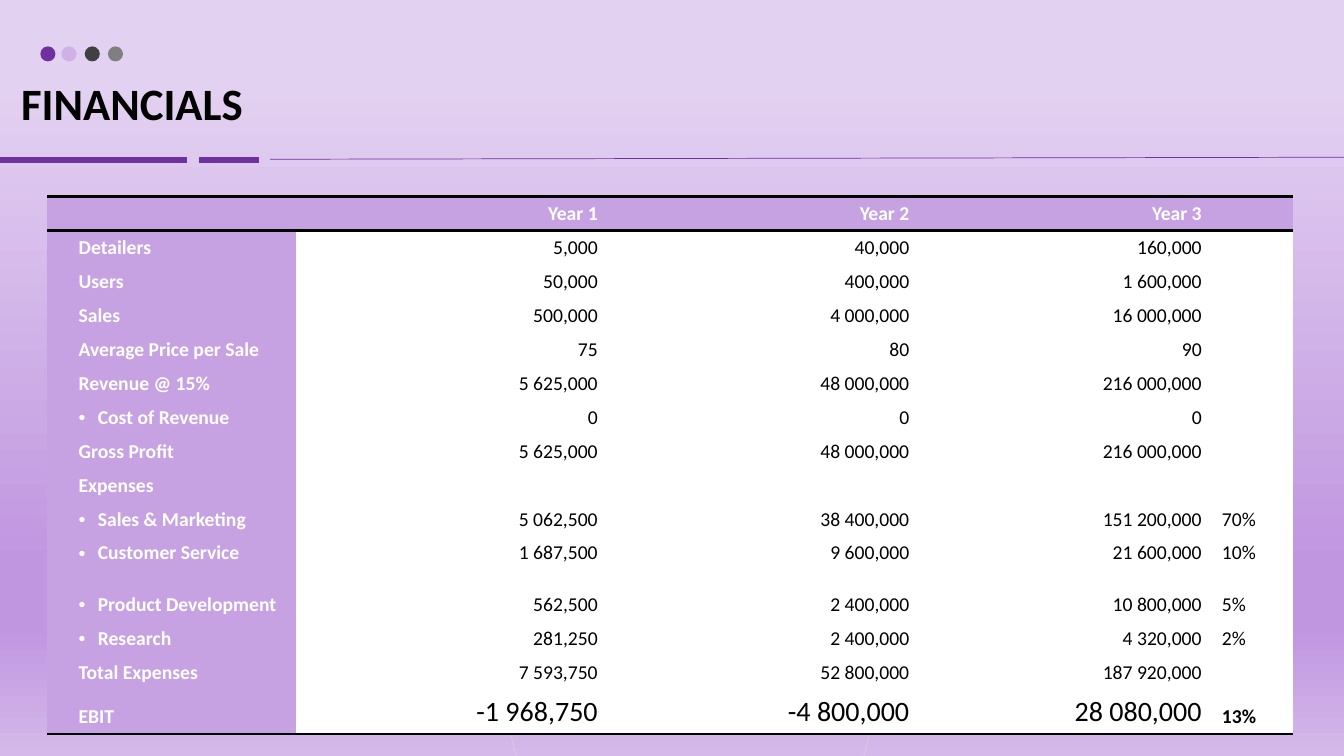
from copy import deepcopy
from lxml.etree import SubElement
from pptx import Presentation
from pptx.dml.color import RGBColor
from pptx.enum.shapes import MSO_CONNECTOR as CONN, MSO_SHAPE as SHAPE
from pptx.enum.text import MSO_ANCHOR as ANCHOR, MSO_AUTO_SIZE as AUTO, PP_ALIGN as ALIGN
from pptx.oxml.ns import qn
from pptx.util import Inches, Pt


def rgb(color):
    return RGBColor.from_string(color)


def border(cell, side):
    ln = SubElement(cell._tc.get_or_add_tcPr(), qn("a:" + side), w=str(Pt(2)))
    fill = SubElement(ln, qn("a:solidFill"))
    SubElement(fill, qn("a:srgbClr"), val="000000")


PURPLE, LILAC, WHITE, BLACK = "7030A0", "C7A2E3", "FFFFFF", "000000"

prs = Presentation()
prs.slide_width, prs.slide_height = Inches(13.33), Inches(7.5)
s = prs.slides.add_slide(prs.slide_layouts[5])

bg = s.background.fill
bg.gradient()
bg.gradient_angle = 270
gs_list = bg.gradient_stops[0]._gs.getparent()
for _ in range(2):
    gs_list.append(deepcopy(gs_list[0]))
stops = [(0.11, "E3D1F1"), (0.75, "C096E0"), (0.83, "C096E0"), (1, "D5B9EA")]
for stop, (position, color) in zip(bg.gradient_stops, stops):
    stop.position = position
    stop.color.rgb = rgb(color)

rules = [(-0.03, 1.59, 1.85, 1.59, 4.5), (1.97, 1.59, 2.57, 1.59, 4.5),
         (2.68, 1.58, 13.33, 1.56, 0.5)]
for x1, y1, x2, y2, width in rules:
    rule = s.shapes.add_connector(CONN.STRAIGHT, Inches(x1), Inches(y1), Inches(x2), Inches(y2))
    rule.line.color.rgb = rgb(PURPLE)
    rule.line.width = Pt(width)
    SubElement(rule._element.spPr, qn("a:effectLst"))

for x, color in [(0.4, PURPLE), (0.61, LILAC), (0.84, "404040"), (1.07, "7F7F7F")]:
    dot = s.shapes.add_shape(SHAPE.OVAL, Inches(x), Inches(0.46), Inches(0.15), Inches(0.15))
    dot.shadow.inherit = False
    dot.fill.solid()
    dot.fill.fore_color.rgb = rgb(color)
    dot.line.fill.background()
    if color == LILAC:
        clr = dot._element.spPr.find(".//" + qn("a:srgbClr"))
        SubElement(clr, qn("a:alpha"), val="70000")

ring = s.shapes.add_shape(SHAPE.OVAL, Inches(5.04), Inches(5.16), Inches(3.61), Inches(3.61))
ring.shadow.inherit = False
ring.fill.background()
ring.line.color.rgb = rgb("D9D9D9")
ring.line.width = Pt(0.25)

title = s.shapes.title
title.left, title.top = Inches(0.21), Inches(0.82)
title.width, title.height = Inches(11.09), Inches(0.47)
tf = title.text_frame
tf.text = "FINANCIALS"
tf.auto_size = AUTO.NONE
tf.vertical_anchor = ANCHOR.BOTTOM
tf.margin_left = tf.margin_top = tf.margin_right = tf.margin_bottom = 0
p = tf.paragraphs[0]
p.alignment = ALIGN.LEFT
p.line_spacing = 0.9
font = p.runs[0].font
font.name, font.size, font.bold = "Calibri", Pt(32), True
font.color.rgb = rgb(BLACK)

rows = [
    ("", "Year 1", "Year 2", "Year 3", ""),
    ("Detailers", "5,000", "40,000", "160,000", ""),
    ("Users", "50,000", "400,000", "1 600,000", ""),
    ("Sales", "500,000", "4 000,000", "16 000,000", ""),
    ("Average Price per Sale", "75", "80", "90", ""),
    ("Revenue @ 15%", "5 625,000", "48 000,000", "216 000,000", ""),
    ("Cost of Revenue", "0", "0", "0", ""),
    ("Gross Profit", "5 625,000", "48 000,000", "216 000,000", ""),
    ("Expenses", "", "", "", ""),
    ("Sales & Marketing", "5 062,500", "38 400,000", "151 200,000", "70%"),
    ("Customer Service", "1 687,500", "9 600,000", "21 600,000", "10%"),
    ("Product Development", "562,500", "2 400,000", "10 800,000", "5%"),
    ("Research", "281,250", "2 400,000", "4 320,000", "2%"),
    ("Total Expenses", "7 593,750", "52 800,000", "187 920,000", ""),
    ("EBIT", "-1 968,750", "-4 800,000", "28 080,000", "13%"),
]
bulleted = {"Cost of Revenue", "Sales & Marketing", "Customer Service",
            "Product Development", "Research"}
heights = {"Product Development": 0.51, "EBIT": 0.41}
last = len(rows) - 1

frame = s.shapes.add_table(len(rows), 5, Inches(0.47), Inches(1.95), Inches(12.35), Inches(5.28))
table = frame.table
table.first_row = table.horz_banding = False
table._tbl.tblPr.find(qn("a:tableStyleId")).text = "{2D5ABB26-0587-4C30-8999-92F81FD0307C}"
for column, width in zip(table.columns, [2.47, 3.09, 3.09, 2.9, 0.8]):
    column.width = Inches(width)

for i, row in enumerate(rows):
    table.rows[i].height = Inches(heights.get(row[0], 0.32))
    for j, text in enumerate(row):
        cell = table.cell(i, j)
        label = i == 0 or j == 0
        if i == 0:
            border(cell, "lnT")
        if i in (0, last):
            border(cell, "lnB")
        cell.fill.solid()
        cell.fill.fore_color.rgb = rgb(LILAC if label else WHITE)
        cell.vertical_anchor = ANCHOR.BOTTOM
        if j == 0:
            cell.margin_left = Inches(0.31)
        p = cell.text_frame.paragraphs[0]
        if not text:
            SubElement(p._p, qn("a:endParaRPr"), sz="1400")
            continue
        p.text = text
        p.alignment = ALIGN.RIGHT if j in (1, 2, 3) else ALIGN.LEFT
        if text in bulleted:
            pPr = p._p.get_or_add_pPr()
            pPr.set("marL", str(Inches(0.19)))
            pPr.set("indent", str(Inches(-0.19)))
            SubElement(pPr, qn("a:buFont"), typeface="Arial")
            SubElement(pPr, qn("a:buChar"), char="•")
        font = p.runs[0].font
        font.name = "Calibri"
        font.size = Pt(20 if i == last and j in (1, 2, 3) else 14)
        font.bold = label or (i == last and j == 4)
        font.color.rgb = rgb(WHITE if label else BLACK)

prs.save("out.pptx")
